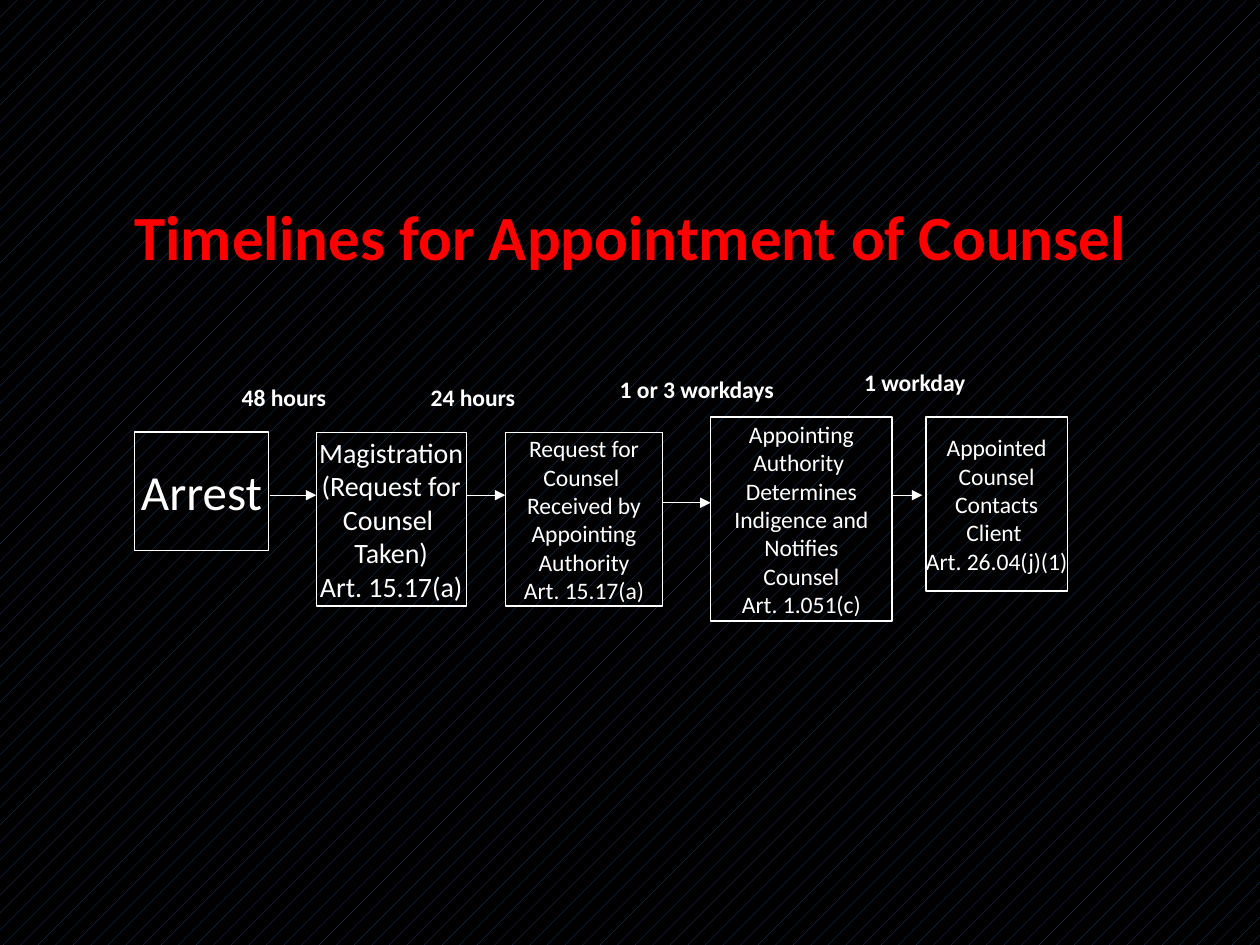
import pptx
import pptx.dml.color
import pptx.enum.dml
import pptx.enum.shapes
import pptx.enum.text
import pptx.oxml.ns
import pptx.util
from lxml import etree
from pptx.util import Inches

WHITE, RED, BLACK, NAVY = "FFFFFF", "FF0000", "000000", "1F497D"
CENTER = pptx.enum.text.PP_ALIGN.CENTER
LEFT = pptx.enum.text.PP_ALIGN.LEFT
MIDDLE = pptx.enum.text.MSO_ANCHOR.MIDDLE


def color(hex_code):
    return pptx.dml.color.RGBColor.from_string(hex_code)


def write(frame, text, size, hex_code, align, bold=False):
    frame.text = text
    for paragraph in frame.paragraphs:
        paragraph.alignment = align
        for run in paragraph.runs:
            run.font.name = "Calibri"
            run.font.size = pptx.util.Pt(size)
            run.font.bold = bold
            run.font.color.rgb = color(hex_code)


presentation = pptx.Presentation()
presentation.slide_width = Inches(10)
presentation.slide_height = Inches(7.5)
slide = presentation.slides.add_slide(presentation.slide_layouts[6])

# Patterned background
background = slide.background.fill
background.patterned()
background.pattern = pptx.enum.dml.MSO_PATTERN.PERCENT_5
background.fore_color.rgb = color(NAVY)
background.back_color.rgb = color(BLACK)

# Title
title = slide.shapes.add_textbox(Inches(0.48), Inches(1.59), Inches(9.05), Inches(0.56))
title.text_frame.word_wrap = True
title.text_frame.vertical_anchor = MIDDLE
write(title.text_frame, "Timelines for Appointment of Counsel", 36, RED, CENTER, bold=True)

# Steps: left, top, width, height, text size, text
steps = [
    (1.07, 3.43, 1.06, 0.94, 28, "Arrest"),
    (2.51, 3.43, 1.19, 1.38, 16,
     "Magistration\n(Request for\nCounsel \nTaken)\nArt. 15.17(a)"),
    (4.01, 3.43, 1.25, 1.38, 13.5,
     "Request for\nCounsel \nReceived by\nAppointing\nAuthority\nArt. 15.17(a)"),
    (5.64, 3.31, 1.44, 1.62, 13.5,
     "Appointing\nAuthority \nDetermines\nIndigence and\nNotifies\nCounsel\nArt. 1.051(c)"),
    (7.35, 3.31, 1.12, 1.38, 13.5,
     "Appointed\nCounsel\nContacts\nClient \nArt. 26.04(j)(1)"),
]
for left, top, width, height, size, text in steps:
    step = slide.shapes.add_shape(
        pptx.enum.shapes.MSO_SHAPE.RECTANGLE,
        Inches(left), Inches(top), Inches(width), Inches(height))
    step.shadow.inherit = False
    step.fill.background()
    step.line.color.rgb = color(WHITE)
    step.line.width = pptx.util.Pt(0.75)
    step.text_frame.word_wrap = False
    step.text_frame.vertical_anchor = MIDDLE
    write(step.text_frame, text, size, WHITE, CENTER)

# Time limits above the arrows: left, top, width, text
limits = [
    (1.82, 2.99, 0.94, "48 hours"),
    (3.32, 2.99, 0.94, "24 hours"),
    (4.82, 2.93, 1.69, "1 or 3 workdays"),
    (6.76, 2.87, 1.19, "1 workday"),
]
for left, top, width, text in limits:
    limit = slide.shapes.add_textbox(Inches(left), Inches(top), Inches(width), Inches(0.33))
    limit.text_frame.word_wrap = True
    limit.text_frame.auto_size = pptx.enum.text.MSO_AUTO_SIZE.SHAPE_TO_FIT_TEXT
    write(limit.text_frame, text, 13.5, WHITE, LEFT, bold=True)

# Arrows between the steps: start x, end x, y
for start, end, y in [(2.14, 2.51, 3.93), (3.7, 4.01, 3.93),
                      (5.26, 5.64, 3.99), (7.07, 7.32, 3.93)]:
    arrow = slide.shapes.add_connector(
        pptx.enum.shapes.MSO_CONNECTOR.STRAIGHT,
        Inches(start), Inches(y), Inches(end), Inches(y))
    arrow.line.color.rgb = color(WHITE)
    arrow.line.width = pptx.util.Pt(0.75)
    etree.SubElement(arrow.line._get_or_add_ln(), pptx.oxml.ns.qn("a:tailEnd"), type="triangle")
    etree.SubElement(arrow._element.spPr, pptx.oxml.ns.qn("a:effectLst"))

presentation.save("out.pptx")
